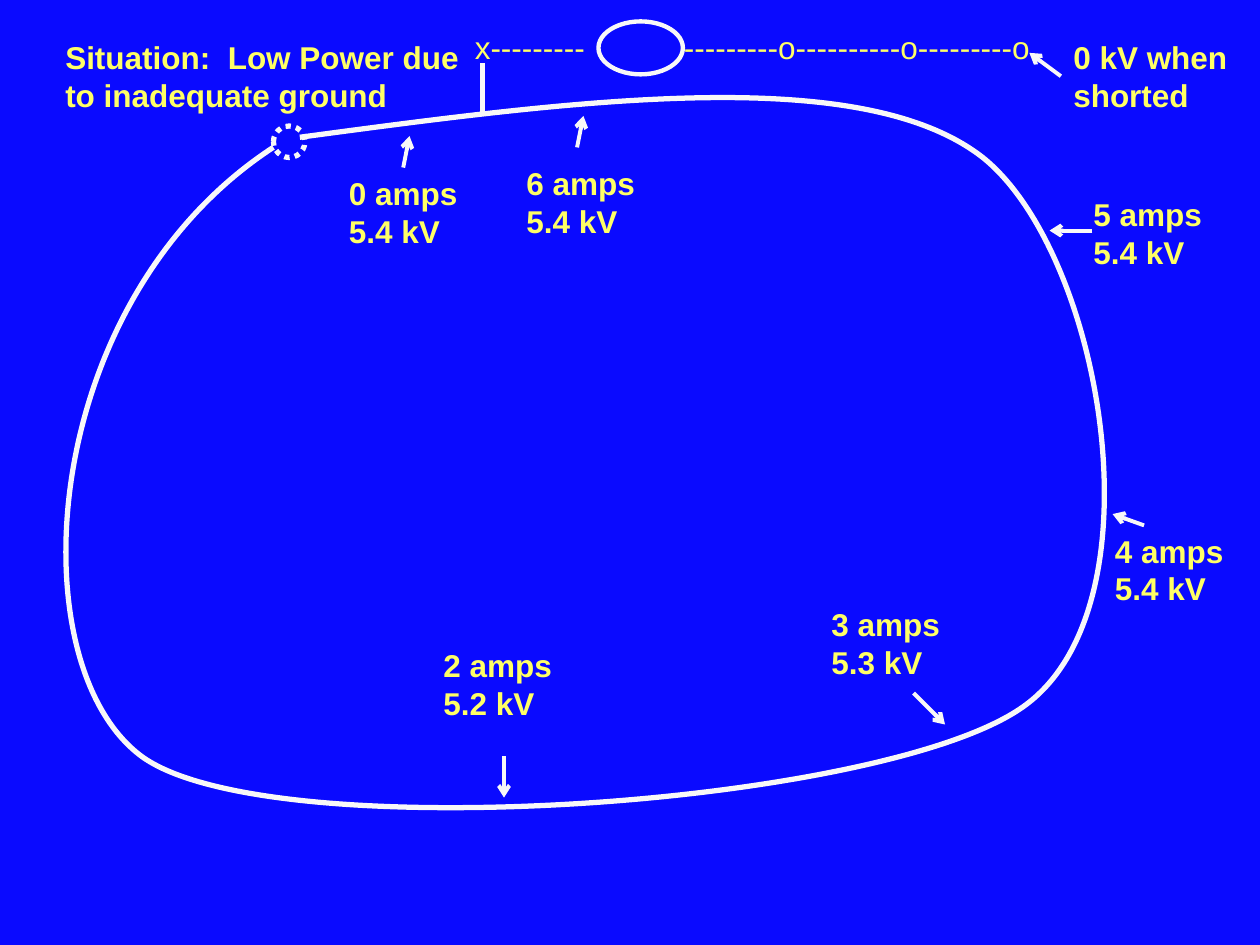
from lxml.etree import SubElement
from pptx import Presentation
from pptx.dml.color import RGBColor
from pptx.enum.dml import MSO_LINE
from pptx.enum.shapes import MSO_CONNECTOR, MSO_SHAPE
from pptx.enum.text import MSO_AUTO_SIZE
from pptx.oxml.ns import qn
from pptx.util import Inches, Pt

BLUE = RGBColor(0x0A, 0x0A, 0xFF)
WHITE = RGBColor(0xF8, 0xF8, 0xF8)
YELLOW = RGBColor(0xFF, 0xFF, 0x66)

FENCE_START = (2.38, 1.09)
FENCE_CURVES = [
    ((4.61, 0.79), (6.84, 0.5), (7.8, 1.25)),
    ((8.75, 2.01), (9.24, 4.82), (8.12, 5.61)),
    ((7.01, 6.4), (2.12, 6.74), (1.12, 6)),
    ((0.13, 5.26), (0.3, 2.39), (2.17, 1.17)),
]

READINGS = [
    (8.58, 1.5, "5 amps", "5.4 kV"),
    (8.75, 4.17, "4 amps", "5.4 kV"),
    (2.67, 1.33, "0 amps", "5.4 kV"),
    (4.08, 1.25, "6 amps", "5.4 kV"),
    (3.42, 5.08, "2 amps", "5.2 kV"),
    (6.5, 4.75, "3 amps", "5.3 kV"),
]
READING_ARROWS = [
    ((8.67, 1.83), (8.33, 1.83)),
    ((9.08, 4.17), (8.83, 4.08)),
    ((3.2, 1.33), (3.25, 1.08)),
    ((4.58, 1.17), (4.63, 0.92)),
    ((4, 6), (4, 6.33)),
    ((7.25, 5.5), (7.5, 5.75)),
]


def add_text(page, left, top, width, height, lines, bold=True, wrap=False):
    """Add a yellow text box with one paragraph per line."""
    box = page.shapes.add_textbox(Inches(left), Inches(top), Inches(width), Inches(height))
    frame = box.text_frame
    frame.word_wrap = wrap
    frame.auto_size = MSO_AUTO_SIZE.SHAPE_TO_FIT_TEXT
    for index, line in enumerate(lines):
        para = frame.add_paragraph() if index else frame.paragraphs[0]
        span = para.add_run()
        span.text = line
        span.font.name = "Arial"
        span.font.size = Pt(18)
        span.font.bold = bold
        span.font.color.rgb = YELLOW
    return box


def style_outline(shape, weight):
    """Give a shape a white outline without fill or shadow."""
    shape.shadow.inherit = False
    shape.fill.background()
    shape.line.color.rgb = WHITE
    shape.line.width = Pt(weight)


def add_ellipse(page, left, top, width, height, weight):
    """Add a hollow ellipse."""
    ellipse = page.shapes.add_shape(
        MSO_SHAPE.OVAL, Inches(left), Inches(top), Inches(width), Inches(height))
    style_outline(ellipse, weight)
    return ellipse


def add_line(page, start, end, weight):
    """Add a straight white line."""
    line = page.shapes.add_connector(
        MSO_CONNECTOR.STRAIGHT, *(Inches(value) for value in (*start, *end)))
    line.line.color.rgb = WHITE
    line.line.width = Pt(weight)
    SubElement(line._element.spPr, qn("a:effectLst"))
    return line


def add_arrow(page, start, end):
    """Add a line with an open arrowhead at its end."""
    arrow = add_line(page, start, end, 2.25)
    outline = arrow.line._get_or_add_ln()
    SubElement(outline, qn("a:tailEnd"), type="arrow")
    return arrow


def bend_segments(shape):
    """Turn each three line segments of a freeform into one cubic curve."""
    outline = next(shape._element.iter(qn("a:path")))
    segments = outline.findall(qn("a:lnTo"))
    for first in range(0, len(segments), 3):
        curve = SubElement(outline, qn("a:cubicBezTo"))
        for segment in segments[first:first + 3]:
            curve.append(segment[0])
            outline.remove(segment)


def add_fence(page):
    """Add the open fence loop."""
    vertices = [(Inches(x), Inches(y)) for curve in FENCE_CURVES for x, y in curve]
    builder = page.shapes.build_freeform(*(Inches(value) for value in FENCE_START))
    builder.add_line_segments(vertices, close=False)
    fence = builder.convert_to_shape()
    bend_segments(fence)
    style_outline(fence, 3)


def add_ground_system(page):
    """Add the charger, its ground rods and the lead to the fence."""
    add_ellipse(page, 4.75, 0.17, 0.67, 0.42, 2.5)
    add_text(page, 5.33, 0.17, 3.33, 0.4, ["---------o----------o---------o"], False, True)
    add_text(page, 3.67, 0.17, 1.17, 0.4, ["x---------"], False, True)
    add_line(page, (3.83, 0.5), (3.83, 0.92), 2.75)
    shorted = add_text(page, 8.42, 0.25, 1.44, 0.71, ["0 kV when", "shorted"])
    add_arrow(page, (8.42, 0.6), (8.17, 0.42)).begin_connect(shorted, 1)


def main():
    """Build the fence diagram and save it."""
    deck = Presentation()
    deck.slide_width, deck.slide_height = Inches(10), Inches(7.5)
    page = deck.slides.add_slide(deck.slide_layouts[6])
    page.background.fill.solid()
    page.background.fill.fore_color.rgb = BLUE

    add_ground_system(page)
    for left, top, *lines in READINGS:
        add_text(page, left, top, 1.07, 0.71, lines)
    for start, end in READING_ARROWS:
        add_arrow(page, start, end)
    add_fence(page)
    gap = add_ellipse(page, 2.17, 1, 0.25, 0.25, 3)
    gap.line.dash_style = MSO_LINE.ROUND_DOT
    add_text(page, 0.42, 0.25, 3.36, 0.71,
             ["Situation:  Low Power due", "to inadequate ground"])
    deck.save("out.pptx")


if __name__ == "__main__":
    main()
